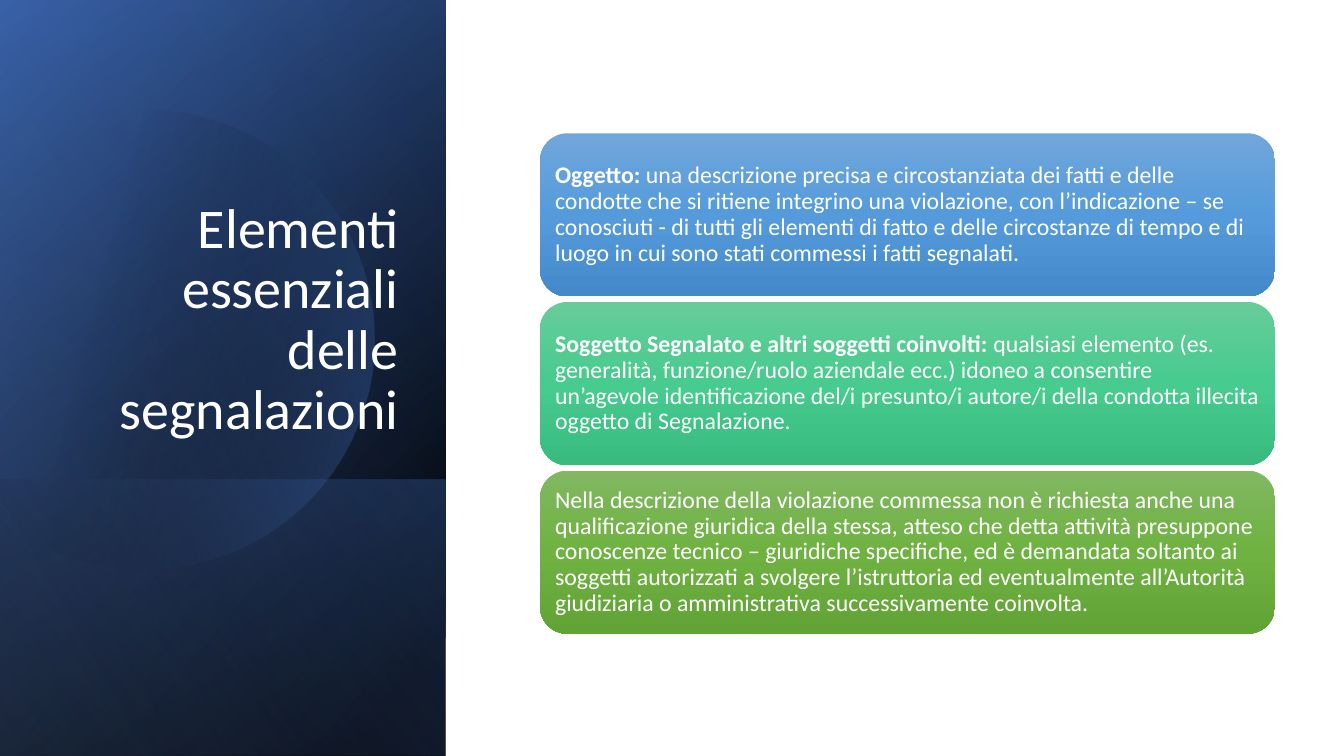
from collections import namedtuple
from math import acos, cos, sin

from lxml import etree
from pptx import Presentation
from pptx.dml.color import RGBColor
from pptx.enum.shapes import MSO_SHAPE
from pptx.enum.text import MSO_ANCHOR, MSO_AUTO_SIZE, PP_ALIGN
from pptx.oxml.ns import qn
from pptx.util import Cm, Pt

RECTANGLE = MSO_SHAPE.RECTANGLE
ROUNDED_RECTANGLE = MSO_SHAPE.ROUNDED_RECTANGLE
LEFT, RIGHT = PP_ALIGN.LEFT, PP_ALIGN.RIGHT
MIDDLE, BOTTOM = MSO_ANCHOR.MIDDLE, MSO_ANCHOR.BOTTOM
NO_AUTOFIT = MSO_AUTO_SIZE.NONE

FONT = "Calibri"
WHITE = RGBColor(0xFF, 0xFF, 0xFF)
BLACK = RGBColor(0x00, 0x00, 0x00)
NAVY = RGBColor(0x2F, 0x55, 0x97)
BLUE = RGBColor(0x44, 0x72, 0xC4)
PALE_BLUE = RGBColor(0x8F, 0xAA, 0xDC)
CARD_BLUES = RGBColor(0x71, 0xA6, 0xDB), RGBColor(0x55, 0x9B, 0xDB), RGBColor(0x44, 0x8A, 0xCA)
CARD_TEALS = RGBColor(0x67, 0xCC, 0x9A), RGBColor(0x47, 0xCB, 0x8E), RGBColor(0x39, 0xBB, 0x7F)
CARD_GREENS = RGBColor(0x81, 0xB8, 0x61), RGBColor(0x6F, 0xB2, 0x42), RGBColor(0x62, 0xA3, 0x36)

# All box lengths are in centimetres.
Box = namedtuple("Box", "left top width height")
SLIDE_WIDTH, SLIDE_HEIGHT = 33.87, 19.05
PANEL = Box(0, 0, 11.23, SLIDE_HEIGHT)
CARD_AREA = Box(13.61, 3.36, 18.52, 12.61)
CARD_GAP = 0.14

TITLE = "Elementi essenziali delle segnalazioni"
CARDS = [
    (CARD_BLUES, "Oggetto: ",
     "una descrizione precisa e circostanziata dei fatti e delle condotte che si ritiene "
     "integrino una violazione, con l’indicazione – se conosciuti - di tutti gli elementi di "
     "fatto e delle circostanze di tempo e di luogo in cui sono stati commessi i fatti segnalati."),
    (CARD_TEALS, "Soggetto Segnalato e altri soggetti coinvolti:",
     " qualsiasi elemento (es. generalità, funzione/ruolo aziendale ecc.) idoneo a consentire "
     "un’agevole identificazione del/i presunto/i autore/i della condotta illecita oggetto di "
     "Segnalazione."),
    (CARD_GREENS, "",
     "Nella descrizione della violazione commessa non è richiesta anche una qualificazione "
     "giuridica della stessa, atteso che detta attività presuppone conoscenze tecnico – "
     "giuridiche specifiche, ed è demandata soltanto ai soggetti autorizzati a svolgere "
     "l’istruttoria ed eventualmente all’Autorità giudiziaria o amministrativa "
     "successivamente coinvolta."),
]


def fill_gradient(shape, stops, angle):
    """Fill with (position, colour, opacity) stops, both in percent, along a clockwise angle."""
    shape.shadow.inherit = False
    shape.line.fill.background()
    shape.fill.gradient()
    gradient = shape.element.spPr.find(qn("a:gradFill"))
    for child in list(gradient):
        gradient.remove(child)
    stop_list = etree.SubElement(gradient, qn("a:gsLst"))
    for position, colour, opacity in stops:
        stop = etree.SubElement(stop_list, qn("a:gs"), pos=str(position * 1000))
        colour_element = etree.SubElement(stop, qn("a:srgbClr"), val=str(colour))
        etree.SubElement(colour_element, qn("a:alpha"), val=str(opacity * 1000))
    etree.SubElement(gradient, qn("a:lin"), ang=str(angle * 60000), scaled="0")


def write_text(shape, text, lead="", size=17, align=LEFT, anchor=MIDDLE, inset=0.18):
    """Write one paragraph, opening with a bold lead if there is one."""
    frame = shape.text_frame
    frame.word_wrap = True
    frame.auto_size = NO_AUTOFIT
    frame.vertical_anchor = anchor
    frame.margin_left = frame.margin_right = Cm(inset)
    frame.margin_top = frame.margin_bottom = Cm(min(inset, 0.18))
    paragraph = frame.paragraphs[0]
    paragraph.alignment = align
    paragraph.line_spacing = 0.9
    for words, bold in ((lead, True), (text, False)):
        if words:
            run = paragraph.add_run()
            run.text = words
            run.font.name = FONT
            run.font.size = Pt(size)
            run.font.bold = bold
            run.font.color.rgb = WHITE


def add_panel_layer(slide, box, stops, angle):
    """Cover the box with a mirrored rectangle turned by 90 degrees, which turns its gradient."""
    left = box.left + (box.width - box.height) / 2
    top = box.top + (box.height - box.width) / 2
    layer = slide.shapes.add_shape(RECTANGLE, Cm(left), Cm(top), Cm(box.height), Cm(box.width))
    layer.rotation = 90
    layer.element.spPr.find(qn("a:xfrm")).set("flipH", "1")
    fill_gradient(layer, stops, angle)


def add_cut_circle(slide, box):
    """Draw a circle cut off by the left edge of the box."""
    radius, offset, steps = 5.79, 3.66, 120
    centre_x, centre_y = box.left + offset, box.top + 8.56
    half_arc = acos(-offset / radius)
    angles = [half_arc * (2 * step / steps - 1) for step in range(steps + 1)]
    points = [(Cm(centre_x + radius * cos(angle)), Cm(centre_y + radius * sin(angle)))
              for angle in angles]
    builder = slide.shapes.build_freeform(*points[0])
    builder.add_line_segments(points[1:], close=True)
    fill_gradient(builder.convert_to_shape(), [(29, BLACK, 0), (100, BLUE, 43)], 14)


def add_title(slide, box):
    title = slide.shapes.title
    title.left, title.top = Cm(box.left + 1.63), Cm(box.top + 4.67)
    title.width, title.height = Cm(box.width - 2.57), Cm(6.65)
    write_text(title, TITLE, size=40, align=RIGHT, anchor=BOTTOM, inset=0.25)
    title.element.getparent().append(title.element)  # in front of the panel


def add_title_panel(slide, box):
    foot_height = 6.96
    foot = Box(box.left, box.top + box.height - foot_height, box.width, foot_height)
    add_panel_layer(slide, box, [(8, BLACK, 100), (100, NAVY, 100)], 50)
    add_panel_layer(slide, box, [(0, BLACK, 0), (99, BLUE, 46)], 30)
    add_panel_layer(slide, foot, [(2, BLUE, 29), (100, BLACK, 30)], 130)
    add_cut_circle(slide, box)
    add_panel_layer(slide, box, [(0, BLACK, 0), (99, PALE_BLUE, 11)], 120)
    add_title(slide, box)


def add_cards(slide, box):
    height = (box.height - CARD_GAP * (len(CARDS) - 1)) / len(CARDS)
    for index, (colours, lead, text) in enumerate(CARDS):
        top = box.top + index * (height + CARD_GAP)
        card = slide.shapes.add_shape(
            ROUNDED_RECTANGLE, Cm(box.left), Cm(top), Cm(box.width), Cm(height))
        stops = [(position, colour, 100) for position, colour in zip((0, 50, 100), colours)]
        fill_gradient(card, stops, 90)
        write_text(card, text, lead=lead)


def main():
    presentation = Presentation()
    presentation.slide_width, presentation.slide_height = Cm(SLIDE_WIDTH), Cm(SLIDE_HEIGHT)
    slide = presentation.slides.add_slide(presentation.slide_layouts.get_by_name("Title Only"))
    add_title_panel(slide, PANEL)
    add_cards(slide, CARD_AREA)
    presentation.save("out.pptx")


if __name__ == "__main__":
    main()
